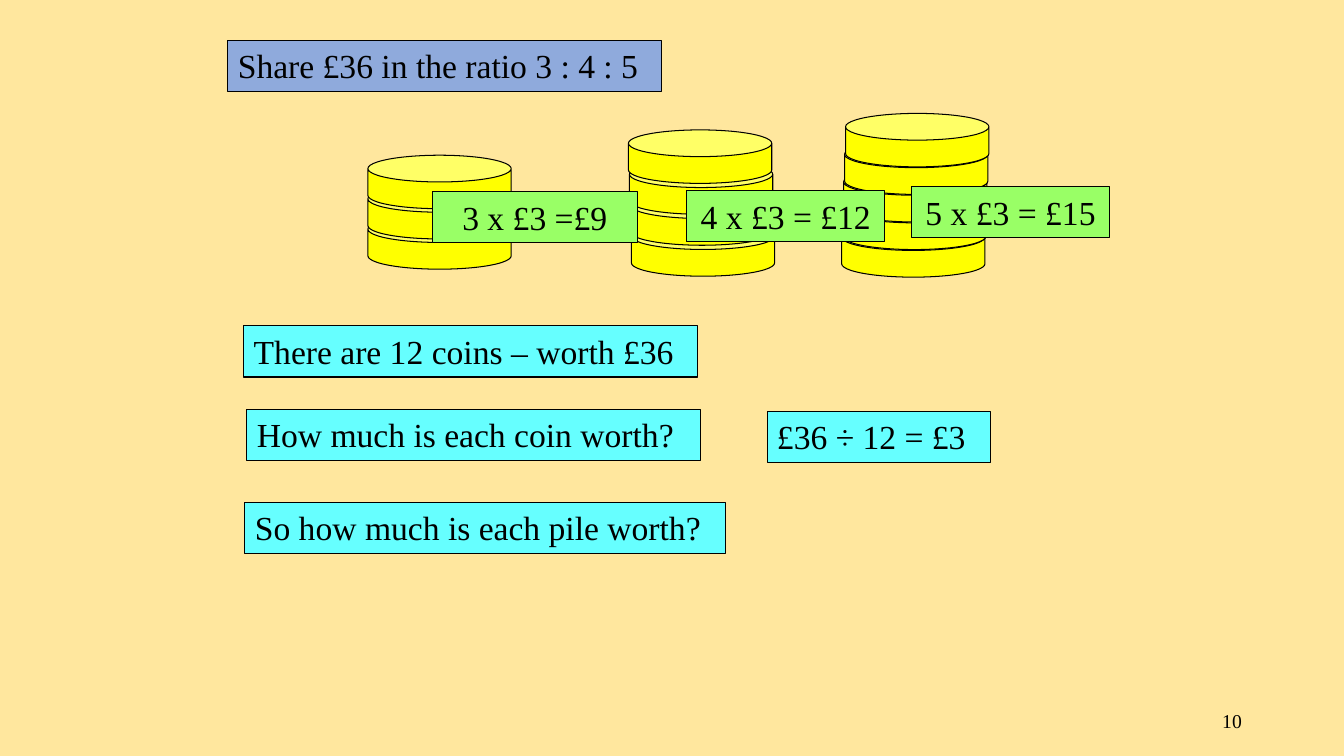
from pptx import Presentation
from pptx import util as u
from pptx.dml.color import RGBColor
from pptx.enum import shapes, text

Pt = u.Pt
FONT = "Times New Roman"
COLOURS = {
    "background": "FFE79E",
    "title": "8FAADC",
    "step": "66FFFF",
    "answer": "99FF66",
    "coin": "FFFF00",
    "ink": "000000",
}
COIN_WIDTH, COIN_HEIGHT = 102.4, 38.2
LABEL_HEIGHT = 36.7

# left and top of the bottom coin, coin count, sideways drift and rise per coin
PILES = [
    (262.8, 154.1, 3, 0, 21.6),
    (451, 159.1, 4, -0.7, 22.1),
    (601.2, 159.8, 5, 0.7, 19.7),
]
# left, top, width, wording
STEPS = [
    (174.2, 232.6, 324, "There are 12 coins – worth £36"),
    (176.4, 292.3, 324, "How much is each coin worth?"),
    (547.9, 293.8, 159.8, "£36 ÷ 12 = £3"),
    (175, 358.6, 343.4, "So how much is each pile worth?"),
]
ANSWERS = [
    (308.9, 136.8, 146.2, "3 x £3 =£9"),
    (490.3, 136.1, 141.8, "4 x £3 = £12"),
    (650.9, 133.2, 141.8, "5 x £3 = £15"),
]


def colour(name):
    return RGBColor.from_string(COLOURS[name])


def paint(shape, fill):
    shape.fill.solid()
    shape.fill.fore_color.rgb = colour(fill)
    shape.line.color.rgb = colour("ink")
    shape.line.width = Pt(0.75)


def write(shape, wording, size, align, anchor):
    frame = shape.text_frame
    frame.word_wrap = True
    frame.auto_size = text.MSO_AUTO_SIZE.NONE
    frame.vertical_anchor = anchor
    paragraph = frame.paragraphs[0]
    paragraph.alignment = align
    paragraph.space_before = Pt(0)
    run = paragraph.add_run()
    run.text = wording
    run.font.name = FONT
    run.font.size = Pt(size)
    run.font.color.rgb = colour("ink")


def add_title(slide, left, top, width, wording):
    title = slide.shapes.title
    title.left, title.top = Pt(left), Pt(top)
    title.width, title.height = Pt(width), Pt(LABEL_HEIGHT)
    paint(title, "title")
    write(title, wording, 24, text.PP_ALIGN.LEFT, text.MSO_ANCHOR.TOP)


def add_pile(slide, left, top, count, drift, rise):
    """Stack coins upwards from the bottom coin at left, top."""
    for level in range(count):
        coin = slide.shapes.add_shape(
            shapes.MSO_SHAPE.CAN,
            Pt(left + level * drift), Pt(top - level * rise),
            Pt(COIN_WIDTH), Pt(COIN_HEIGHT))
        coin.adjustments[0] = 0.5
        coin.shadow.inherit = False
        paint(coin, "coin")


def add_label(slide, left, top, width, wording, fill, align):
    label = slide.shapes.add_shape(
        shapes.MSO_SHAPE.RECTANGLE,
        Pt(left), Pt(top), Pt(width), Pt(LABEL_HEIGHT))
    label.shadow.inherit = False
    paint(label, fill)
    write(label, wording, 24, align, text.MSO_ANCHOR.TOP)


def add_page_number(slide, left, top, width, height, number):
    box = slide.shapes.add_textbox(Pt(left), Pt(top), Pt(width), Pt(height))
    write(box, number, 14, text.PP_ALIGN.RIGHT, text.MSO_ANCHOR.MIDDLE)


def main():
    presentation = Presentation()
    presentation.slide_width, presentation.slide_height = Pt(960), Pt(540)
    slide = presentation.slides.add_slide(presentation.slide_layouts[5])
    slide.background.fill.solid()
    slide.background.fill.fore_color.rgb = colour("background")

    add_title(slide, 162.7, 28.8, 309.6, "Share £36 in the ratio 3 : 4 : 5")
    for pile in PILES:
        add_pile(slide, *pile)
    for step in STEPS:
        add_label(slide, *step, "step", text.PP_ALIGN.LEFT)
    for answer in ANSWERS:
        add_label(slide, *answer, "answer", text.PP_ALIGN.CENTER)
    add_page_number(slide, 678.2, 500.4, 216, 28.8, "10")
    presentation.save("out.pptx")


if __name__ == "__main__":
    main()
